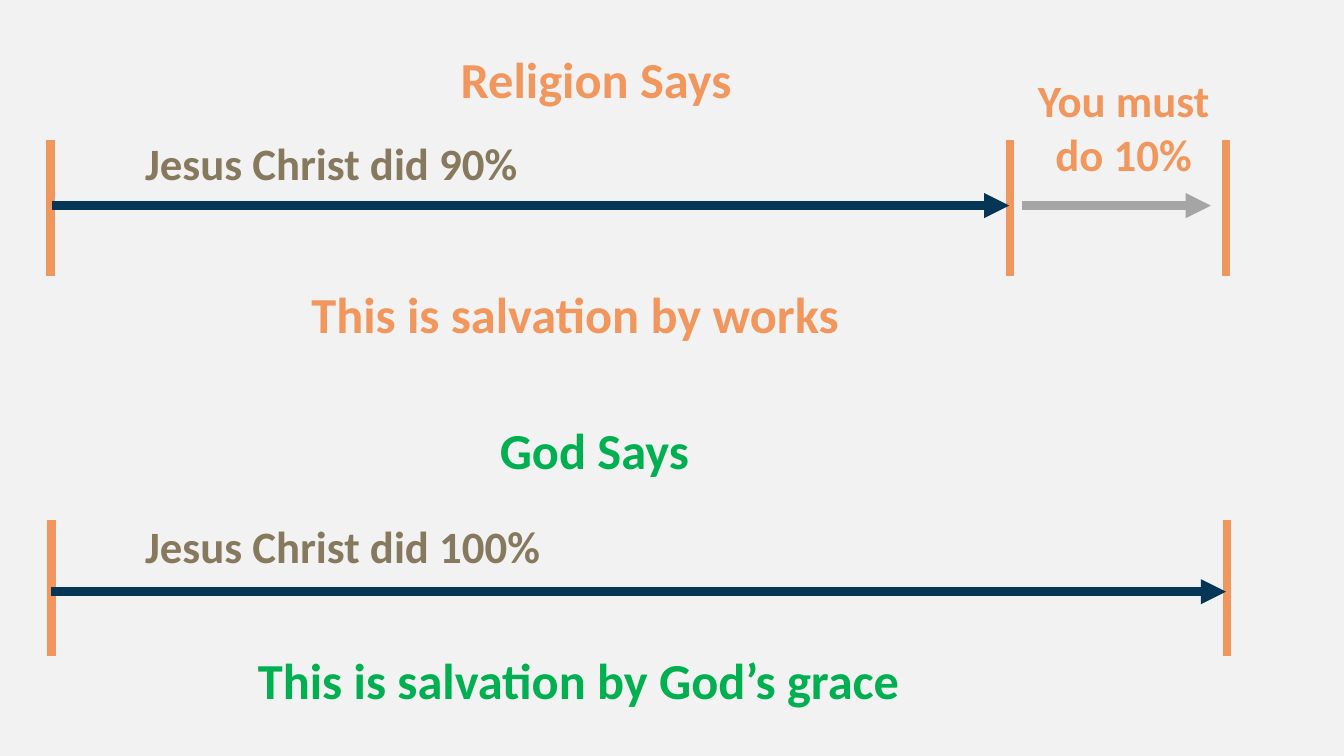
from lxml import etree
from pptx import Presentation
from pptx.dml.color import RGBColor
from pptx.enum.shapes import MSO_CONNECTOR
from pptx.enum.text import MSO_AUTO_SIZE, PP_ALIGN
from pptx.oxml.ns import qn
from pptx.util import Inches, Pt

STRAIGHT = MSO_CONNECTOR.STRAIGHT
LEFT, CENTER = PP_ALIGN.LEFT, PP_ALIGN.CENTER
FIT_SHAPE = MSO_AUTO_SIZE.SHAPE_TO_FIT_TEXT

ORANGE, NAVY, GRAY = "F1975D", "063656", "A5A5A5"
BROWN, GREEN, BACKGROUND = "87795D", "00B050", "F2F2F2"
HEADING_HEIGHT, CLAIM_HEIGHT, TICK_HEIGHT = 0.71, 0.64, 1.35


def color(hex_value):
    return RGBColor.from_string(hex_value)


def add_line(slide, start, end, line_color, arrow=False):
    connector = slide.shapes.add_connector(
        STRAIGHT, *(Inches(value) for value in (*start, *end)))
    connector.line.color.rgb = color(line_color)
    connector.line.width = Pt(6)
    if arrow:
        outline = connector.line._get_or_add_ln()
        etree.SubElement(outline, qn("a:tailEnd"), type="triangle")
    etree.SubElement(connector._element.spPr, qn("a:effectLst"))


def add_text(slide, box, text, size, text_color, alignment=LEFT):
    text_box = slide.shapes.add_textbox(*(Inches(value) for value in box))
    frame = text_box.text_frame
    frame.word_wrap = True
    frame.auto_size = FIT_SHAPE
    paragraph = frame.paragraphs[0]
    paragraph.text = text
    paragraph.alignment = alignment
    paragraph.font.name = "Calibri"
    paragraph.font.size = Pt(size)
    paragraph.font.bold = True
    paragraph.font.color.rgb = color(text_color)


def add_timeline(slide, left, top, ticks, arrows):
    for offset in ticks:
        x = left + offset
        add_line(slide, (x, top), (x, top + TICK_HEIGHT), ORANGE)
    for start, end, drop, arrow_color in arrows:
        y = top + drop
        add_line(slide, (left + start, y), (left + end, y), arrow_color, True)


def add_view(slide, box, heading, claim, conclusion, accent):
    left, top, width, height = box
    heading_text, heading_offset, heading_width = heading
    claim_text, claim_drop = claim
    conclusion_text, conclusion_offset, conclusion_width = conclusion
    add_text(slide, (left + heading_offset, top, heading_width, HEADING_HEIGHT),
             heading_text, 36, accent)
    add_text(slide, (left + 0.84, top + claim_drop, 4.6, CLAIM_HEIGHT),
             claim_text, 32, BROWN)
    add_text(slide, (left + conclusion_offset, top + height - HEADING_HEIGHT,
                     conclusion_width, HEADING_HEIGHT),
             conclusion_text, 36, accent)


def add_religion_view(slide, box):
    left, top, width, height = box
    add_timeline(slide, left, top + 0.96, (0, 9.52, width),
                 ((0.02, 9.51, 0.65, NAVY), (9.64, 11.51, 0.65, GRAY)))
    add_view(slide, box, ("Religion Says", 3.97, 3.41),
             ("Jesus Christ did 90%", 0.87),
             ("This is salvation by works", 2.49, 6.27), ORANGE)
    add_text(slide, (left + 9.64, top + 0.24, 2.01, 1.18),
             "You must do 10%", 32, ORANGE, CENTER)


def add_god_view(slide, box):
    left, top, width, height = box
    add_timeline(slide, left + 0.01, top + 1.05, (0, width),
                 ((0, width - 0.01, 0.71, NAVY),))
    add_view(slide, box, ("God Says", 4.36, 2.53),
             ("Jesus Christ did 100%", 0.99),
             ("This is salvation by God’s grace", 1.96, 7.69), GREEN)


def main():
    presentation = Presentation()
    presentation.slide_width = Inches(13.33)
    presentation.slide_height = Inches(7.5)
    slide = presentation.slides.add_slide(presentation.slide_layouts[6])
    slide.background.fill.solid()
    slide.background.fill.fore_color.rgb = color(BACKGROUND)
    add_religion_view(slide, (0.5, 0.43, 11.66, 3.04))
    add_god_view(slide, (0.5, 4.11, 11.66, 2.99))
    presentation.save("out.pptx")


if __name__ == "__main__":
    main()
